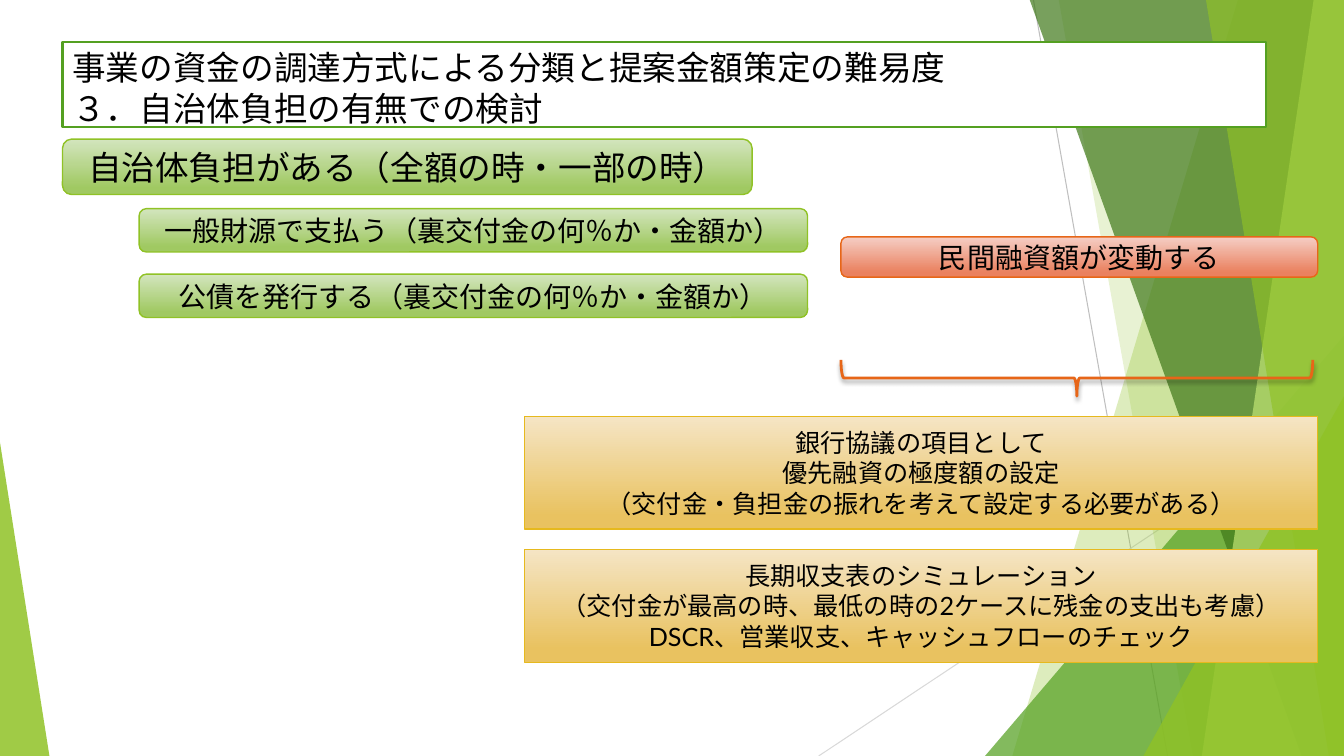
from lxml import etree
from pptx import Presentation
from pptx.dml.color import RGBColor
from pptx.enum.shapes import MSO_CONNECTOR as Connector, MSO_SHAPE as Shape
from pptx.enum.text import MSO_ANCHOR as Anchor, PP_ALIGN as Align
from pptx.oxml.ns import qn
from pptx.util import Inches, Pt

COLORS = {
    "white": "FFFFFF", "black": "000000",
    "lime": "90C226", "green": "54A021", "forest": "3F7819", "pale": "C0E474",
    "orange": "E76618", "gold": "E6B91E",
    "gray": "BFBFBF", "light_gray": "D9D9D9",
}
GRADIENTS = {
    "lime": ("D3E5BE", "A0C962"),
    "orange": ("F5CEC5", "EA815F"),
    "gold": ("F5E5C5", "E9C260"),
}
TOP, BOTTOM, RIGHT = -0.01, 7.5, 13.33


def rgb(name):
    return RGBColor.from_string(COLORS[name])


class SlideBuilder:
    font = "Lato"

    def __init__(self, page):
        self.page = page
        self.shapes = page.shapes

    def line(self, start, end, color):
        x1, y1, x2, y2 = map(Inches, (*start, *end))
        line = self.shapes.add_connector(Connector.STRAIGHT, x1, y1, x2, y2)
        line.line.color.rgb = rgb(color)
        line.line.width = Pt(0.75)
        etree.SubElement(line._element.spPr, qn("a:effectLst"))

    def tint(self, shape, color, opacity):
        """Give a borderless shape a see-through fill, opacity in percent."""
        shape.shadow.inherit = False
        shape.line.fill.background()
        shape.fill.solid()
        shape.fill.fore_color.rgb = rgb(color)
        value = shape._element.spPr.find(f"{qn('a:solidFill')}/{qn('a:srgbClr')}")
        etree.SubElement(value, qn("a:alpha"), val=str(opacity * 1000))

    def band(self, top_x, bottom_x, color, opacity):
        """Draw a slanted band that reaches the right edge of the slide."""
        outline = self.shapes.build_freeform(Inches(top_x), Inches(TOP))
        corners = [(RIGHT, TOP), (RIGHT, BOTTOM), (bottom_x, BOTTOM)]
        outline.add_line_segments([(Inches(x), Inches(y)) for x, y in corners])
        self.tint(outline.convert_to_shape(), color, opacity)

    def triangle(self, place, tip, color, opacity):
        shape = self.shapes.add_shape(Shape.ISOSCELES_TRIANGLE, *map(Inches, place))
        shape.adjustments[0] = tip
        self.tint(shape, color, opacity)

    def box(self, kind, place, lines, size, color, width=1, align=Align.CENTER,
            anchor=Anchor.MIDDLE, gradient=True):
        box = self.shapes.add_shape(kind, *map(Inches, place))
        box.shadow.inherit = False
        box.line.color.rgb = rgb(color)
        box.line.width = Pt(width)
        if gradient:
            box.fill.gradient()
            box.fill.gradient_angle = 270
            stops = zip(box.fill.gradient_stops, GRADIENTS[color], (0, 0.88))
            for stop, value, position in stops:
                stop.color.rgb = RGBColor.from_string(value)
                stop.position = position
        else:
            box.fill.solid()
            box.fill.fore_color.rgb = rgb("white")
        frame = box.text_frame
        frame.word_wrap = True
        frame.vertical_anchor = anchor
        frame.text = lines
        for para in frame.paragraphs:
            para.alignment = align
            for span in para.runs:
                span.font.name = self.font
                span.font.size = Pt(size)
                span.font.color.rgb = rgb("black")

    def brace(self, place, color):
        """Draw a brace that points down, with a soft shadow below it."""
        brace = self.shapes.add_shape(Shape.RIGHT_BRACE, *map(Inches, place))
        brace.rotation = 90
        brace.fill.background()
        brace.line.color.rgb = rgb(color)
        brace.line.width = Pt(2)
        brace.shadow.inherit = False
        effects = brace._element.spPr.find(qn("a:effectLst"))
        shadow = etree.SubElement(
            effects, qn("a:outerShdw"), blurRad=str(Pt(3)), dist=str(Pt(2)),
            dir="5400000", rotWithShape="0")
        value = etree.SubElement(shadow, qn("a:srgbClr"), val=COLORS["black"])
        etree.SubElement(value, qn("a:alpha"), val="35000")


def draw_background(slide):
    slide.line((10.25, 0), (11.58, BOTTOM), "gray")
    slide.line((RIGHT, 4.03), (8.12, BOTTOM), "light_gray")
    slide.band(12.28, 10.04, "lime", 30)
    slide.band(10.5, 11.83, "lime", 20)
    slide.triangle((9.77, 3.33, 3.56, 4.17), 1, "green", 72)
    slide.band(10.21, 12.91, "forest", 70)
    slide.band(13.03, 11.92, "pale", 70)
    slide.band(11.96, 13.18, "lime", 65)
    slide.triangle((11.34, 3.93, 1.99, 3.57), 1, "lime", 80)
    slide.triangle((0, 4.39, 0.49, 3.11), 0, "lime", 85)


def draw_content(slide):
    slide.box(Shape.RECTANGLE, (0.62, 0.42, 11.94, 0.84),
              "事業の資金の調達方式による分類と提案金額策定の難易度\v"
              "３．自治体負担の有無での検討",
              24, "green", width=1.5, align=Align.LEFT, anchor=Anchor.TOP,
              gradient=False)

    rounded = [
        ((0.62, 1.38, 6.84, 0.55), "自治体負担がある（全額の時・一部の時）", 24, "lime"),
        ((1.38, 2.07, 6.63, 0.43), "一般財源で支払う（裏交付金の何％か・金額か）", 20, "lime"),
        ((8.34, 2.35, 4.73, 0.4), "民間融資額が変動する", 20, "orange"),
        ((1.38, 2.72, 6.63, 0.43), "公債を発行する（裏交付金の何％か・金額か）", 20, "lime"),
    ]
    for place, text, size, color in rounded:
        slide.box(Shape.ROUNDED_RECTANGLE, place, text, size, color)

    slide.brace((10.5, 1.41, 0.36, 4.68), "orange")

    checks = [
        "銀行協議の項目として\n優先融資の極度額の設定\n"
        "（交付金・負担金の振れを考えて設定する必要がある）",
        "長期収支表のシミュレーション\n"
        "（交付金が最高の時、最低の時の2ケースに残金の支出も考慮）\n"
        "DSCR、営業収支、キャッシュフローのチェック",
    ]
    for row, text in enumerate(checks):
        place = (5.2, 4.13 + 1.32 * row, 7.87, 1.12)
        slide.box(Shape.RECTANGLE, place, text, 18, "gold")


def main():
    deck = Presentation()
    deck.slide_width, deck.slide_height = Inches(13.33), Inches(7.5)
    slide = SlideBuilder(deck.slides.add_slide(deck.slide_layouts[6]))
    draw_background(slide)
    draw_content(slide)
    deck.save("out.pptx")


if __name__ == "__main__":
    main()
